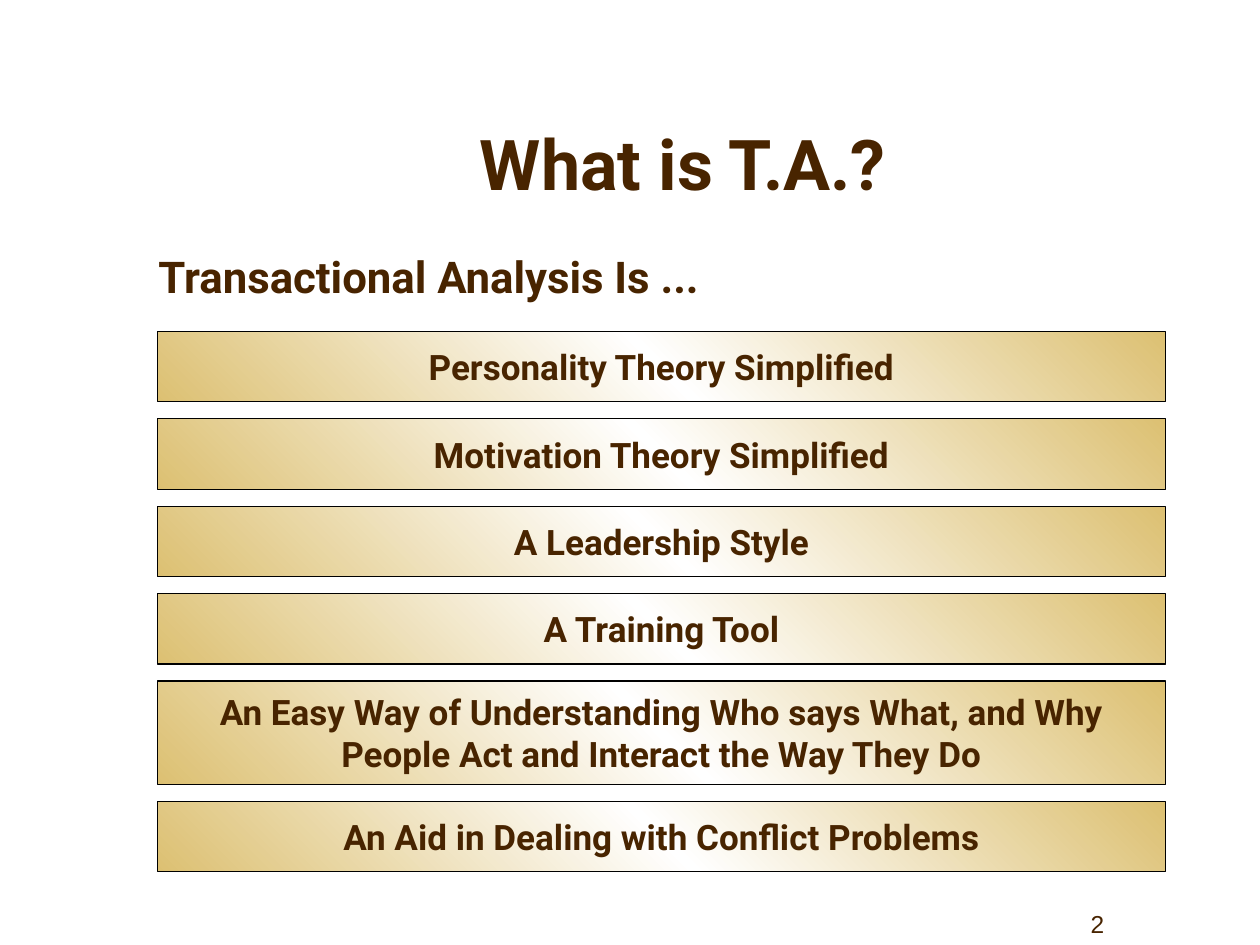
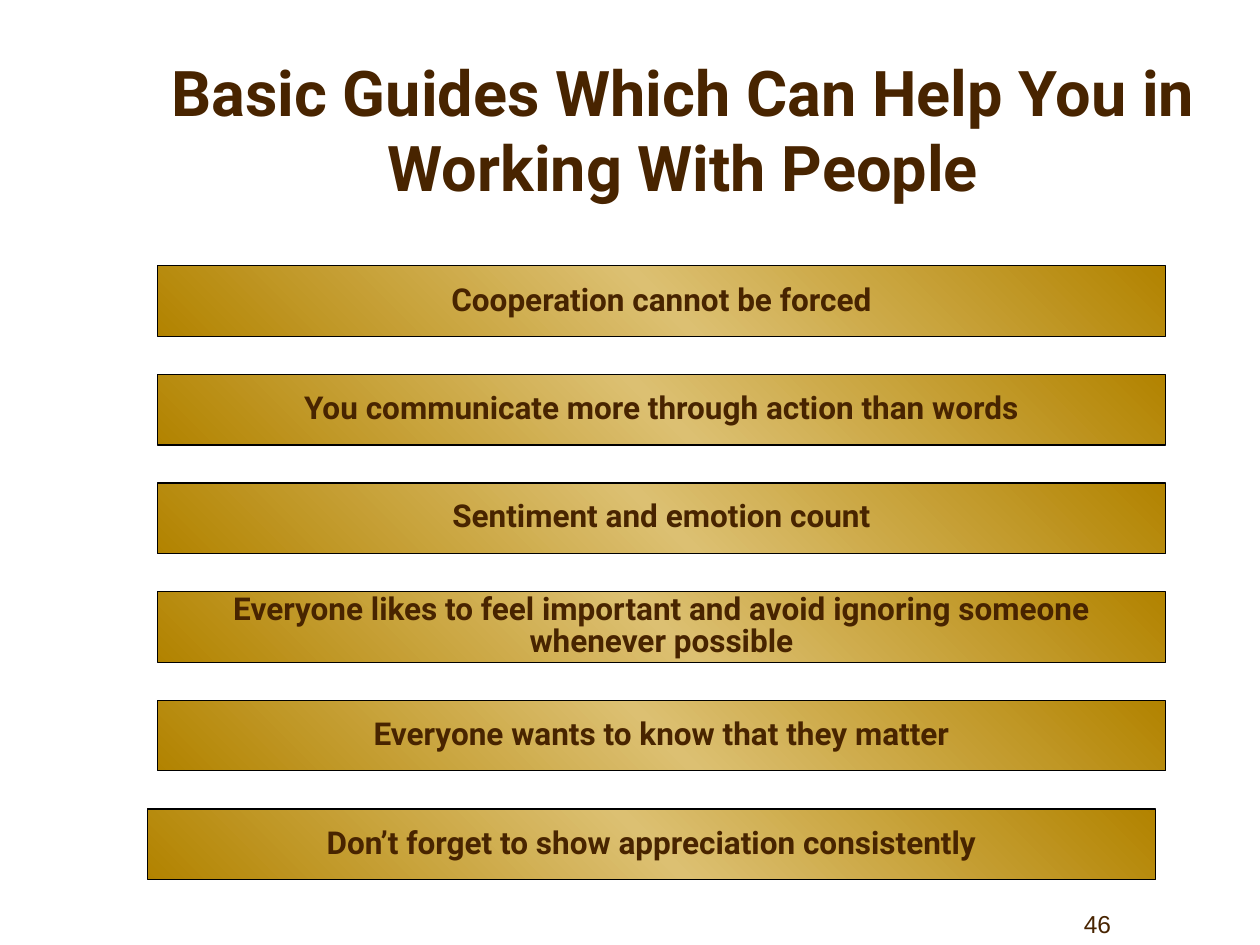
"""Build two slides on transactional analysis with titled stacks of gradient bars."""
from copy import deepcopy

from pptx import Presentation
from pptx.dml.color import RGBColor
from pptx.enum.shapes import MSO_SHAPE
from pptx.enum.text import MSO_ANCHOR, PP_ALIGN
from pptx.oxml.ns import qn
from pptx.util import Inches, Pt

COLORS = {"text": "482400", "line": "000000", "white": "FFFFFF", "sand": "DCC072", "gold": "B28300"}
BAR_LEFT, BAR_WIDTH, BAR_HEIGHT = 1.25, 8, 0.56

SLIDES = [
    {
        "title": "What is T.A.?", "title_size": 40, "number": "2",
        "subtitle": "Transactional Analysis Is ...",
        "edge": "sand", "middle": "white", "size": 20, "top": 2.63, "bottom": 6.92,
        "bars": [
            ("Personality Theory Simplified", {}),
            ("Motivation Theory Simplified", {}),
            ("A Leadership Style", {}),
            ("A Training Tool", {}),
            ("An Easy Way of Understanding Who says What, and Why People Act and Interact the Way They Do",
             {"height": 0.82}),
            ("An Aid in Dealing with Conflict Problems", {}),
        ],
    },
    {
        "title": "Basic Guides Which Can Help You in Working With People", "title_size": 36, "number": "46",
        "edge": "gold", "middle": "sand", "size": 18, "top": 2.11, "bottom": 6.98,
        "bars": [
            ("Cooperation cannot be forced", {"spacing": 0.9}),
            ("You communicate more through action than words", {"spacing": 0.9}),
            ("Sentiment and emotion count", {"spacing": 0.85}),
            ("Everyone likes to feel important and avoid ignoring someone whenever possible", {"spacing": 0.85}),
            ("Everyone wants to know that they matter", {"spacing": 0.9}),
            ("Don’t forget to show appreciation consistently", {"spacing": 0.9, "left": 1.17}),
        ],
    },
]


def write_text(shape, text, size, font="Roboto", bold=True, align=PP_ALIGN.CENTER,
               anchor=MSO_ANCHOR.MIDDLE, spacing=None):
    frame = shape.text_frame
    frame.word_wrap = True
    frame.vertical_anchor = anchor
    paragraph = frame.paragraphs[0]
    paragraph.alignment = align
    paragraph.line_spacing = spacing
    run = paragraph.add_run()
    run.text = text
    run.font.name = font
    run.font.size = Pt(size)
    run.font.bold = bold
    run.font.color.rgb = RGBColor.from_string(COLORS["text"])


def fill_gradient(shape, edge, middle):
    shape.fill.gradient()
    shape.fill.gradient_angle = 45
    first, second = shape.fill.gradient_stops
    first.color.rgb = RGBColor.from_string(COLORS[edge])
    first.position = 0
    second.color.rgb = RGBColor.from_string(COLORS[middle])
    second.position = 0.5
    stops = next(shape._element.iter(qn("a:gsLst")))
    last = deepcopy(stops[0])
    last.set("pos", "100000")
    stops.append(last)


presentation = Presentation()
presentation.slide_width = Inches(10)
presentation.slide_height = Inches(7.5)

for content in SLIDES:
    slide = presentation.slides.add_slide(presentation.slide_layouts[6])
    slide.background.fill.solid()
    slide.background.fill.fore_color.rgb = RGBColor.from_string(COLORS["white"])

    number = slide.shapes.add_textbox(Inches(7.67), Inches(7), Inches(2.08), Inches(0.5))
    write_text(number, content["number"], 14, font="Arial", bold=False, anchor=MSO_ANCHOR.BOTTOM)
    title = slide.shapes.add_textbox(Inches(1.17), Inches(0.25), Inches(8.5), Inches(1.42))
    write_text(title, content["title"], content["title_size"], anchor=MSO_ANCHOR.BOTTOM)
    if "subtitle" in content:
        subtitle = slide.shapes.add_textbox(Inches(1.16), Inches(1.93), Inches(8.5), Inches(4.5))
        write_text(subtitle, content["subtitle"], 25, align=PP_ALIGN.LEFT, anchor=MSO_ANCHOR.TOP)

    bars = content["bars"]
    used = sum(options.get("height", BAR_HEIGHT) for _, options in bars)
    gap = (content["bottom"] - content["top"] - used) / (len(bars) - 1)
    top = content["top"]
    for text, options in bars:
        height = options.get("height", BAR_HEIGHT)
        left = options.get("left", BAR_LEFT)
        bar = slide.shapes.add_shape(
            MSO_SHAPE.RECTANGLE, Inches(left), Inches(top), Inches(BAR_WIDTH), Inches(height))
        bar.shadow.inherit = False
        fill_gradient(bar, content["edge"], content["middle"])
        bar.line.color.rgb = RGBColor.from_string(COLORS["line"])
        bar.line.width = Pt(0.75)
        write_text(bar, text, content["size"], spacing=options.get("spacing"))
        top += height + gap

presentation.save("out.pptx")
